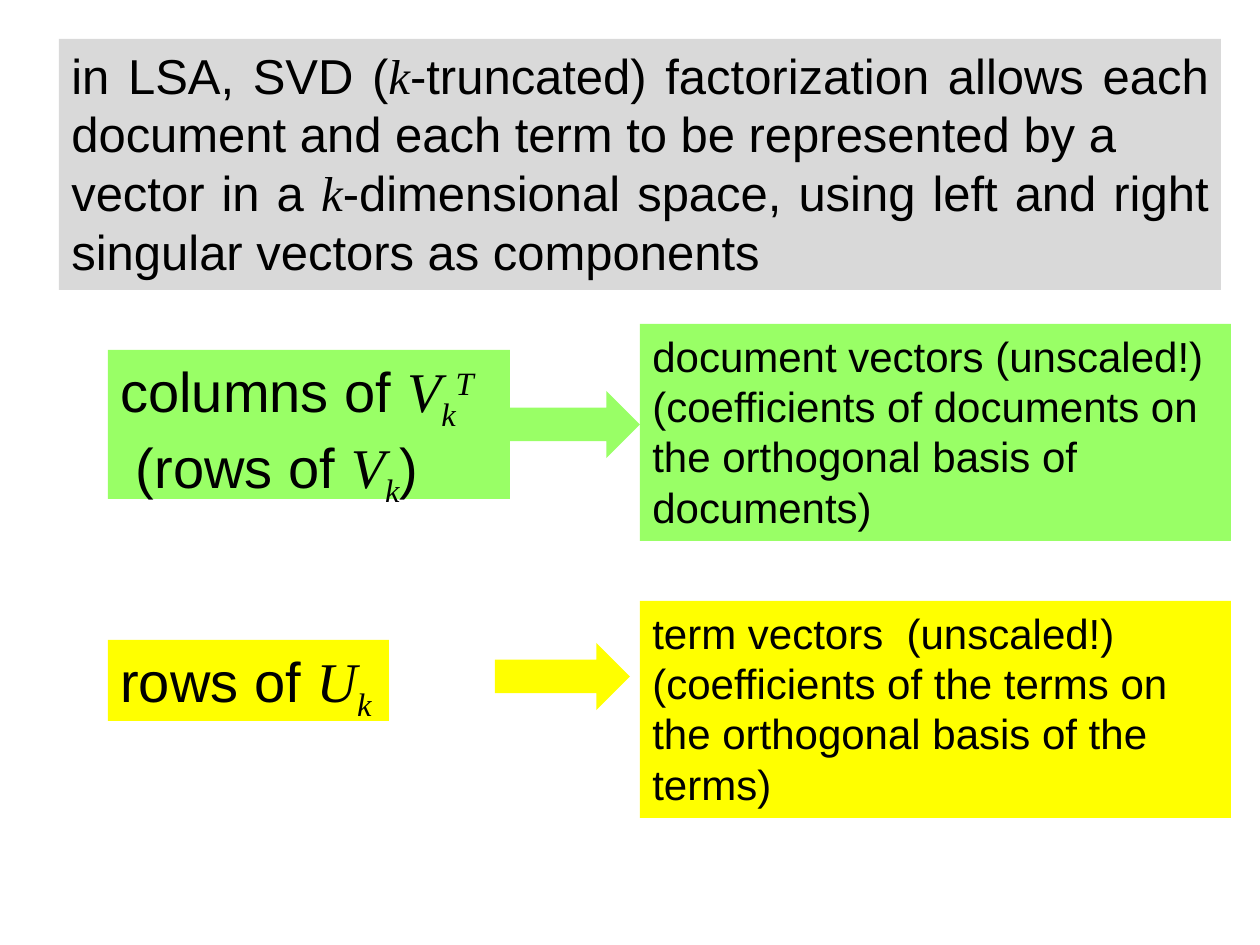
from pptx import Presentation
from pptx import util as u
from pptx.dml.color import RGBColor
from pptx.enum import shapes, text

SCALE = 914400 // 126  # EMU in one px
COLORS = {"gray": "D9D9D9", "green": "99FF66", "yellow": "FFFF00", "ink": "000000"}
SANS, SERIF = "Arial", "Times New Roman"


def px(n):
    return u.Emu(n * SCALE)


def add_block(slide, kind, at, color):
    """Plain filled shape without line or shadow."""
    block = slide.shapes.add_shape(kind, *map(px, at))
    block.shadow.inherit = False
    block.fill.solid()
    block.fill.fore_color.rgb = RGBColor.from_string(COLORS[color])
    block.line.fill.background()
    return block


def add_run(para, words, math=False, base=0):
    """One run; math runs are italic serif, base shifts in percent."""
    run = para.add_run()
    run.text = words
    run.font.name = SERIF if math else SANS
    run.font.italic = math
    if base:
        run._r.get_or_add_rPr().set("baseline", str(base * 1000))


def add_box(slide, at, color, size, paras, wrap=True, align=text.PP_ALIGN.LEFT):
    """Filled box; each paragraph is a list of run arguments."""
    box = add_block(slide, shapes.MSO_SHAPE.RECTANGLE, at, color)
    frame = box.text_frame
    frame.word_wrap = wrap
    frame.auto_size = text.MSO_AUTO_SIZE.SHAPE_TO_FIT_TEXT
    frame.vertical_anchor = text.MSO_ANCHOR.TOP
    for i, runs in enumerate(paras):
        para = frame.add_paragraph() if i else frame.paragraphs[0]
        para.alignment = align
        para.font.size = u.Pt(size)
        para.font.color.rgb = RGBColor.from_string(COLORS["ink"])
        for run in runs:
            add_run(para, *run)


def main():
    prs = Presentation()
    prs.slide_width, prs.slide_height = u.Inches(10), u.Inches(7.5)
    slide = prs.slides.add_slide(prs.slide_layouts[6])
    k, sub = ("k", True), ("k", True, -25)

    # Statement
    add_box(slide, (59, 39, 1162, 251), "gray", 28, [
        [("in LSA, SVD (",), k, ("-truncated) factorization allows each document "
                                 "and each term to be represented by a ",)],
        [("vector in a ",), k, ("-dimensional space, using left and right "
                                "singular vectors as components",)],
    ], align=text.PP_ALIGN.JUSTIFY)

    # Matrix parts
    add_box(slide, (108, 640, 281, 81), "yellow", 32,
            [[("rows of ",), ("U", True), sub]], wrap=False)
    add_box(slide, (108, 350, 402, 149), "green", 32, [
        [("columns of ",), ("V", True), sub, ("T", True, 30)],
        [(" (rows of ",), ("V", True), sub, (")",)],
    ], wrap=False)

    # Resulting vectors
    for top, color, head, note in (
        (601, "yellow", "term vectors  (unscaled!)",
         "(coefficients of the terms on the orthogonal basis of the terms)"),
        (324, "green", "document vectors (unscaled!)",
         "(coefficients of documents on the orthogonal basis of documents)"),
    ):
        add_box(slide, (640, top, 591, 217), color, 24, [[(head,)], [(note,)]])

    # Arrows from parts to vectors
    for left, top, color in ((505, 391, "green"), (495, 643, "yellow")):
        add_block(slide, shapes.MSO_SHAPE.RIGHT_ARROW, (left, top, 135, 67), color)

    prs.save("out.pptx")


if __name__ == "__main__":
    main()
